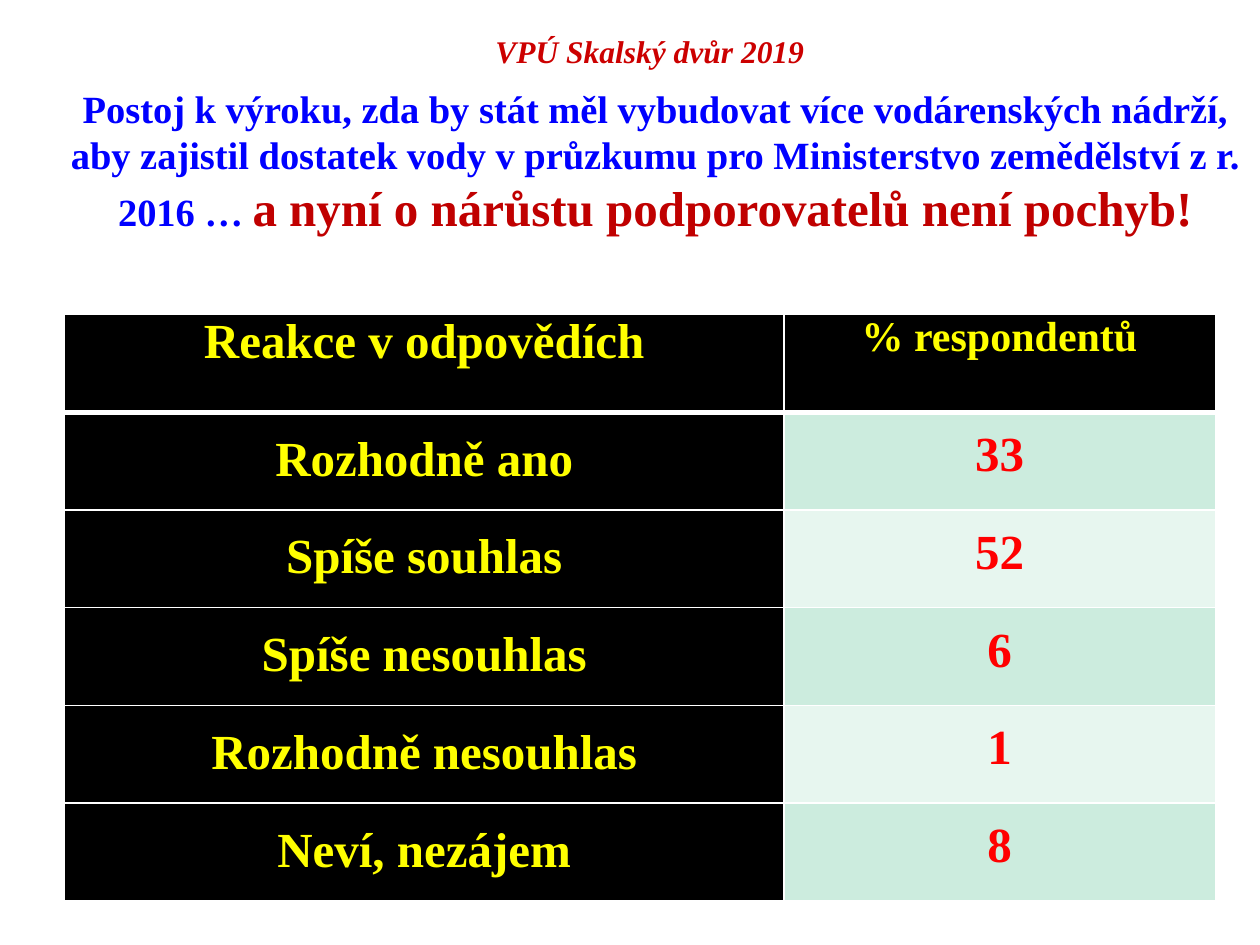
from lxml import etree
from pptx import Presentation
from pptx import util as u
from pptx.dml.color import RGBColor
from pptx.enum import text
from pptx.oxml import ns

BLACK = RGBColor(0, 0, 0)
YELLOW = RGBColor(0xFF, 0xFF, 0)
RED = RGBColor(0xFF, 0, 0)
CRIMSON = RGBColor(0xCC, 0, 0)
MAROON = RGBColor(0xC0, 0, 0)
BLUE = RGBColor(0, 0, 0xFF)
MINT = RGBColor(0xCC, 0xEC, 0xDE)
PALE = RGBColor(0xE7, 0xF6, 0xEF)


def write(para, words, size, color, italic=False):
    para.alignment = text.PP_ALIGN.CENTER
    run = para.add_run()
    run.text = words
    run.font.name = "Times New Roman"
    run.font.size = u.Pt(size)
    run.font.bold = True
    run.font.italic = italic
    run.font.color.rgb = color


def edge(cell, base):
    props = cell._tc.get_or_add_tcPr()
    for i, (side, width) in enumerate([("L", 1), ("R", 1), ("T", 1), ("B", base)]):
        line = etree.Element(ns.qn(f"a:ln{side}"), w=str(u.Pt(width)))
        fill = etree.SubElement(line, ns.qn("a:solidFill"))
        etree.SubElement(fill, ns.qn("a:srgbClr"), val="FFFFFF")
        props.insert(i, line)


deck = Presentation()
deck.slide_width = u.Cm(25.4)
deck.slide_height = u.Cm(19.05)
slide = deck.slides.add_slide(deck.slide_layouts[6])

rows = [
    ("Reakce v odpovědích", "% respondentů"),
    ("Rozhodně ano", "33"),
    ("Spíše souhlas", "52"),
    ("Spíše nesouhlas", "6"),
    ("Rozhodně nesouhlas", "1"),
    ("Neví, nezájem", "8"),
]
frame = slide.shapes.add_table(
    len(rows), 2, u.Cm(1.3), u.Cm(6.34), u.Cm(23.2), u.Cm(11.82)
)
table = frame.table
table.columns[0].width = u.Cm(14.5)
table.columns[1].width = u.Cm(8.7)

for r, row in enumerate(rows):
    table.rows[r].height = u.Cm(1.97)
    for c, words in enumerate(row):
        cell = table.cell(r, c)
        head = r == 0
        cell.margin_left = cell.margin_right = u.Cm(0.18)
        cell.margin_top = u.Cm(0 if head else (0.41, 0.32)[c])
        cell.margin_bottom = 0
        cell.fill.solid()
        dark = head or c == 0
        cell.fill.fore_color.rgb = BLACK if dark else (PALE, MINT)[r % 2]
        edge(cell, 3 if head else 1)
        size = 24 if head and c == 1 else 28
        write(cell.text_frame.paragraphs[0], words, size, YELLOW if dark else RED)

title = slide.shapes.add_textbox(u.Cm(0.86), u.Cm(1.65), u.Cm(24.7), u.Cm(3.18))
body = title.text_frame
body.word_wrap = True
body.vertical_anchor = text.MSO_ANCHOR.MIDDLE
para = body.paragraphs[0]
write(
    para,
    "Postoj k výroku, zda by stát měl vybudovat více vodárenských nádrží, "
    "aby zajistil dostatek vody v průzkumu pro Ministerstvo zemědělství z r. 2016 … ",
    22,
    BLUE,
)
write(para, "a nyní o nárůstu podporovatelů není pochyb!", 28, MAROON)

event = slide.shapes.add_textbox(u.Cm(6.5), u.Cm(0.53), u.Cm(13.2), u.Cm(1.02))
event.text_frame.word_wrap = True
write(event.text_frame.paragraphs[0], "VPÚ Skalský dvůr 2019", 18, CRIMSON, True)

deck.save("out.pptx")
